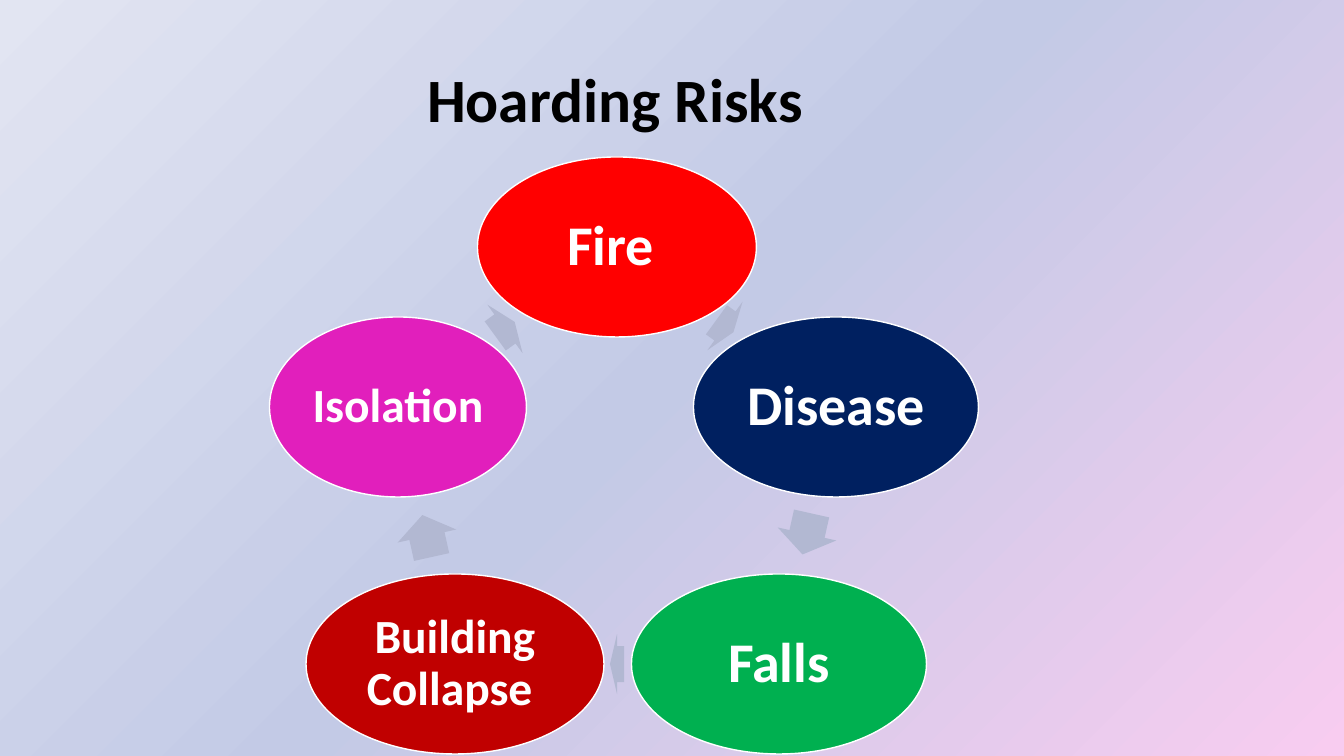
from pptx import Presentation
from pptx.dml.color import RGBColor
from pptx.enum.shapes import MSO_SHAPE as Preset
from pptx.enum.text import MSO_ANCHOR as Anchor, MSO_AUTO_SIZE as AutoSize, PP_ALIGN as Align
from pptx.oxml import parse_xml
from pptx.oxml.ns import nsdecls
from pptx.util import Emu, Pt

EMU_PER_PX = 914400 / 100.8
COLORS = {
    "title": "000000", "label": "FFFFFF", "outline": "FFFFFF", "arrow": "B2B8D2",
    "fire": "FF0000", "disease": "002060", "falls": "00B050",
    "collapse": "C00000", "isolation": "E11FBC",
    "glow": "F8CCF0", "mid": "C3CAE6", "pale": "E2E5F2",
}
AXIS_X = 617
RISK_HEIGHT = 180
ARROW_HEIGHT = 60

# label, colour, offset from axis, centre y, width, text size, inset
RISKS = [
    ("Fire ", "fire", 0, 247, 279, 40, 6),
    ("Disease ", "disease", 219, 407, 285, 40, 6),
    ("Falls", "falls", 162, 664, 295, 40, 6),
    ("Building Collapse ", "collapse", -162, 664, 298, 34, 5),
    ("Isolation ", "isolation", -219, 407, 257, 34, 5),
]
# offset from axis, centre y, length, rotation; each follows its risk
ARROWS = [
    (108, 326, 21, 36),
    (190, 534, 42, 102.5),
    (0, 664, 14, 180),
    (-190, 536, 43, 257.5),
    (-112, 329, 24, 324),
]


def px(length):
    return Emu(round(length * EMU_PER_PX))


def color(name):
    return RGBColor.from_string(COLORS[name])


class RiskSlide:
    """Holds the font and the slide being drawn."""

    def __init__(self, slide, font="Calibri"):
        self.slide = slide
        self.font = font

    def background(self, *stops):
        """Circular gradient that spreads from the bottom right corner."""
        self.slide.background.fill.gradient()
        preset = self.slide.element.xpath(".//p:bgPr/a:gradFill")[0]
        marks = "".join(
            f'<a:gs pos="{pos * 1000}"><a:srgbClr val="{COLORS[name]}"/></a:gs>'
            for pos, name in stops)
        preset.getparent().replace(preset, parse_xml(
            f'<a:gradFill {nsdecls("a")} rotWithShape="1"><a:gsLst>{marks}</a:gsLst>'
            '<a:path path="circle"><a:fillToRect l="100000" t="100000"/></a:path>'
            '</a:gradFill>'))

    def add_text(self, paragraph, text, size, color_name):
        run = paragraph.add_run()
        run.text = text
        run.font.name = self.font
        run.font.size = Pt(size)
        run.font.bold = True
        run.font.color.rgb = color(color_name)

    def title(self, text, left, top, width, height, indent):
        heading = self.slide.shapes.title
        heading.left, heading.top = px(left), px(top)
        heading.width, heading.height = px(width), px(height)
        frame = heading.text_frame
        frame.auto_size = AutoSize.NONE
        frame.vertical_anchor = Anchor.TOP
        paragraph = frame.paragraphs[0]
        paragraph.alignment = Align.LEFT
        paragraph.line_spacing = 1.0
        paragraph.space_before = Pt(0)
        properties = paragraph._p.get_or_add_pPr()
        properties.set("marL", str(px(indent)))
        properties.set("indent", "0")
        self.add_text(paragraph, text, 44, "title")

    def centred(self, preset, offset, middle, width, height, fill):
        shape = self.slide.shapes.add_shape(
            preset, px(AXIS_X + offset - width / 2), px(middle - height / 2),
            px(width), px(height))
        shape.shadow.inherit = False
        shape.fill.solid()
        shape.fill.fore_color.rgb = color(fill)
        return shape

    def risk(self, label, fill, offset, middle, width, size, inset):
        oval = self.centred(Preset.OVAL, offset, middle, width, RISK_HEIGHT, fill)
        oval.line.color.rgb = color("outline")
        oval.line.width = Pt(1)
        frame = oval.text_frame
        frame.word_wrap = True
        frame.vertical_anchor = Anchor.MIDDLE
        frame.margin_left = frame.margin_right = px(inset)
        frame.margin_top = frame.margin_bottom = px(inset)
        paragraph = frame.paragraphs[0]
        paragraph.alignment = Align.CENTER
        paragraph.line_spacing = 0.9
        self.add_text(paragraph, label, size, "label")

    def arrow(self, offset, middle, length, rotation):
        arrow = self.centred(Preset.RIGHT_ARROW, offset, middle, length, ARROW_HEIGHT, "arrow")
        arrow.line.fill.background()
        arrow.adjustments[0] = 0.6
        arrow.adjustments[1] = 0.5
        arrow.rotation = rotation


def main():
    deck = Presentation()
    deck.slide_width, deck.slide_height = px(1344), px(756)
    page = RiskSlide(deck.slides.add_slide(deck.slide_layouts[5]))
    page.background((0, "glow"), (50, "mid"), (100, "pale"))
    page.title("Hoarding Risks", 180, 56, 711, 85, indent=237)
    for risk, arrow in zip(RISKS, ARROWS):
        page.risk(*risk)
        page.arrow(*arrow)
    deck.save("out.pptx")


if __name__ == "__main__":
    main()
